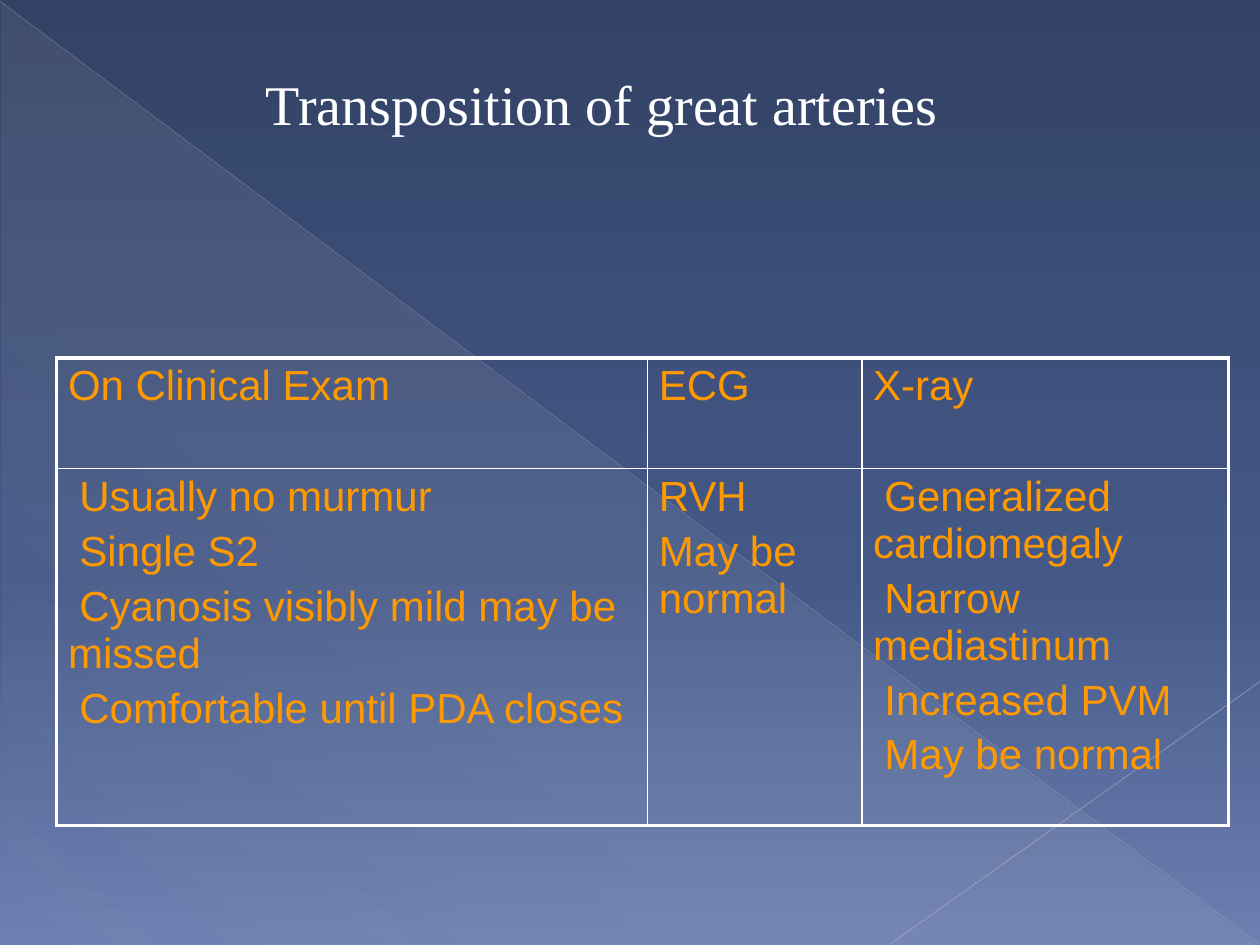
from lxml import etree
from pptx import Presentation
from pptx.dml.color import RGBColor
from pptx.enum.shapes import MSO_CONNECTOR, MSO_SHAPE
from pptx.enum.text import MSO_ANCHOR, PP_ALIGN
from pptx.oxml import parse_xml
from pptx.oxml.ns import nsdecls, qn
from pptx.util import Inches, Pt

TITLE = "Transposition of great arteries"
# heading, findings, whether the findings have a first-line indent
COLUMNS = [
    ("On Clinical Exam", ["Usually no murmur", "Single S2",
                          "Cyanosis visibly mild may be missed",
                          "Comfortable until PDA closes"], True),
    ("ECG", ["RVH", "May be normal"], False),
    ("X-ray", ["Generalized cardiomegaly", "Narrow mediastinum",
               "Increased PVM", "May be normal"], True),
]
COL_WIDTHS = [4.69, 1.7, 2.91]
ROW_HEIGHTS = [0.88, 2.83]
COLORS = {"white": "FFFFFF", "orange": "FF9900", "sheen": "D4D4D6",
          "diagonal": "B9BDC8", "corner": "C1C4CE",
          "sky_top": "334265", "sky_mid": "445887", "sky_low": "6C7FB1"}
# stops: position %, colour, opacity %
SKY = [(0, "sky_top", 100), (60, "sky_mid", 100), (100, "sky_low", 100)]
SHEEN = [(0, "sheen", 10), (70, "sheen", 8), (100, "sheen", 1)]
# start, end, colour, width in points, opacity %
RAYS = [((0, 0.01), (9.99, 7.49), "diagonal", 0.39, 35),
        ((10, 5.41), (7.07, 7.49), "corner", 0.47, 45)]
OUTER, INNER = 2.25, 1


def rgb(name):
    return RGBColor.from_string(COLORS[name])


def set_gradient(parent, stops, angle):
    """Replace the solid fill directly under parent by a linear gradient."""
    gs = "".join(
        f'<a:gs pos="{pos * 1000}"><a:srgbClr val="{COLORS[color]}">'
        f'<a:alpha val="{opacity * 1000}"/></a:srgbClr></a:gs>'
        for pos, color, opacity in stops)
    grad = parse_xml(f'<a:gradFill {nsdecls("a")} rotWithShape="1"><a:gsLst>{gs}</a:gsLst>'
                     f'<a:lin ang="{angle * 60000}" scaled="0"/></a:gradFill>')
    parent.replace(parent.find(qn("a:solidFill")), grad)


def add_ray(s, start, end, color, width, opacity):
    ray = s.shapes.add_connector(MSO_CONNECTOR.STRAIGHT,
                                 *(Inches(v) for v in start + end))
    ray.line.color.rgb = rgb(color)
    ray.line.width = Pt(width)
    clr = ray.element.spPr.find(".//" + qn("a:srgbClr"))
    etree.SubElement(clr, qn("a:alpha")).set("val", str(opacity * 1000))
    etree.SubElement(ray.element.spPr, qn("a:effectLst"))


def set_borders(cell, widths):
    tcPr = cell._tc.get_or_add_tcPr()
    for side, width in widths.items():
        tcPr.append(parse_xml(
            f'<a:ln{side} {nsdecls("a")} w="{Pt(width)}"><a:solidFill>'
            f'<a:srgbClr val="{COLORS["white"]}"/></a:solidFill></a:ln{side}>'))


def style_run(p, font, size, color):
    for r in p.runs:
        r.font.name, r.font.size, r.font.bold = font, Pt(size), False
        r.font.color.rgb = rgb(color)


def fill_cell(cell, lines, indented):
    cell.margin_left = cell.margin_right = Inches(0.09)
    cell.margin_top = cell.margin_bottom = Inches(0.04)
    cell.text_frame.text = "\n".join(lines)
    for p in cell.text_frame.paragraphs:
        p.space_before = Pt(4.6)
        style_run(p, "Arial", 24, "orange")
        if indented:
            pPr = p._p.get_or_add_pPr()
            pPr.set("marL", "0")
            pPr.set("indent", str(Inches(0.09)))


def add_backdrop(s):
    s.background.fill.solid()
    set_gradient(s.element.find(".//" + qn("p:bgPr")), SKY, 90)
    sheen = s.shapes.add_shape(MSO_SHAPE.RIGHT_TRIANGLE, Inches(0.01), Inches(0.02),
                               Inches(9.98), Inches(7.48))
    sheen.shadow.inherit = False
    sheen.line.fill.background()
    sheen.fill.solid()
    set_gradient(sheen.element.spPr, SHEEN, 133)
    for ray in RAYS:
        add_ray(s, *ray)


def add_title(s):
    title = s.shapes.title
    title.left, title.top = Inches(2.01), Inches(0.5)
    title.width, title.height = Inches(6.13), Inches(0.64)
    tf = title.text_frame
    tf.text = TITLE
    tf.word_wrap = True
    tf.vertical_anchor = MSO_ANCHOR.MIDDLE
    tf.paragraphs[0].alignment = PP_ALIGN.LEFT
    style_run(tf.paragraphs[0], "Times New Roman", 32, "white")


def add_findings(s):
    n_rows, n_cols = len(ROW_HEIGHTS), len(COLUMNS)
    table = s.shapes.add_table(n_rows, n_cols, Inches(0.45), Inches(2.84),
                               Inches(sum(COL_WIDTHS)), Inches(sum(ROW_HEIGHTS))).table
    table.first_row = table.horz_banding = False
    for row, height in zip(table.rows, ROW_HEIGHTS):
        row.height = Inches(height)
    for c, (heading, findings, indented) in enumerate(COLUMNS):
        table.columns[c].width = Inches(COL_WIDTHS[c])
        for r, lines in enumerate([[heading], findings]):
            cell = table.cell(r, c)
            fill_cell(cell, lines, indented and r > 0)
            edges = {"L": c == 0, "R": c == n_cols - 1, "T": r == 0, "B": r == n_rows - 1}
            set_borders(cell, {side: OUTER if outer else INNER
                               for side, outer in edges.items()})
            cell.fill.background()


def main():
    prs = Presentation()
    prs.slide_width, prs.slide_height = Inches(10), Inches(7.5)
    s = prs.slides.add_slide(prs.slide_layouts[5])
    add_backdrop(s)
    add_findings(s)
    add_title(s)
    prs.save("out.pptx")


if __name__ == "__main__":
    main()
